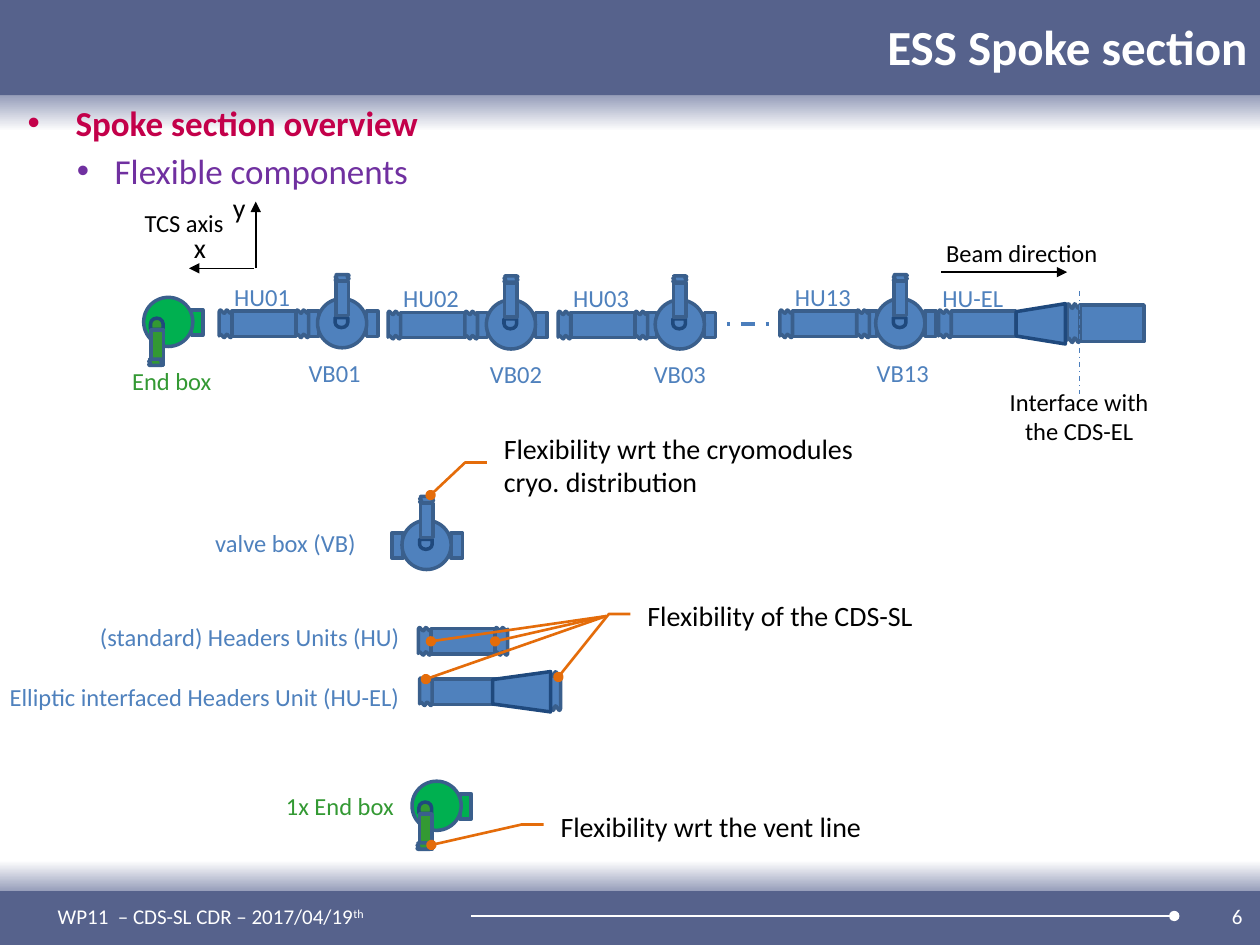
import pptx
import pptx.util
import pptx.dml.color
import pptx.enum.dml
import pptx.enum.shapes
import pptx.enum.text
import pptx.oxml.ns
import lxml.etree

Inches = pptx.util.Inches
Pt = pptx.util.Pt
SHAPE = pptx.enum.shapes.MSO_SHAPE
ALIGN = pptx.enum.text.PP_ALIGN
ANCHOR = pptx.enum.text.MSO_ANCHOR
FIT = pptx.enum.text.MSO_AUTO_SIZE
DASH_DOT = pptx.enum.dml.MSO_LINE.DASH_DOT

COLORS = {
    "bar": "56628C", "fade": "989FBB", "white": "FFFFFF", "black": "000000",
    "heading": "C3004A", "subheading": "7030A0", "pipe": "4F81BD", "edge": "3A5F8C",
    "deep": "1F497D", "axis": "4B7EBC", "box": "00B050", "vent": "339933", "note": "E46C0A",
}

BARS = [(0, 0.76), (7.07, 0.43)]
FADES = [(0.76, 0.28, "fade", "white"), (6.83, 0.24, "white", "fade")]

BULLETS = [
    ("Spoke section overview", "heading", True, 0.38, -0.38, 0),
    ("Flexible components", "subheading", False, 0.69, -0.3, 3),
]

VALVE_BOX = [
    (SHAPE.RECTANGLE, -0.08, 0.1, 0.09, 0.2, 0, "pipe", "edge"),
    (SHAPE.RECTANGLE, 0.39, 0.1, 0.09, 0.2, 0, "pipe", "edge"),
    (SHAPE.OVAL, 0, 0, 0.39, 0.39, 0, "pipe", "edge"),
    (SHAPE.FLOWCHART_DELAY, 0.15, 0.14, 0.08, 0.1, 90, "pipe", "deep"),
    (SHAPE.RECTANGLE, 0.06, -0.05, 0.27, 0.1, 90, "pipe", "edge"),
    (SHAPE.DOUBLE_WAVE, 0.17, -0.22, 0.05, 0.11, 90, "pipe", "edge"),
]
END_BOX = [
    (SHAPE.RECTANGLE, 0.38, 0.1, 0.09, 0.2, 0, "box", "edge"),
    (SHAPE.OVAL, 0, 0, 0.39, 0.39, 0, "box", "edge"),
    (SHAPE.FLOWCHART_DELAY, 0.06, 0.16, 0.09, 0.1, 270, "vent", "deep"),
    (SHAPE.RECTANGLE, -0.03, 0.35, 0.28, 0.1, 270, "vent", "edge"),
    (SHAPE.DOUBLE_WAVE, 0.07, 0.46, 0.05, 0.11, 90, "vent", "edge"),
]
PIPE = [
    (SHAPE.RECTANGLE, 0.1, 0, 0.51, 0.2, 0, "pipe", "edge"),
    (SHAPE.DOUBLE_WAVE, 0, -0.01, 0.1, 0.22, 0, "pipe", "edge"),
]
HEADER_UNIT = PIPE + [(SHAPE.DOUBLE_WAVE, 0.61, -0.01, 0.1, 0.22, 0, "pipe", "edge")]
OUTLET = [(SHAPE.RECTANGLE, 1.12, -0.05, 0.51, 0.29, 0, "pipe", "edge")]

CELLS = [
    ("HU01", 1.74, "VB01", 2.52, 2.35, 2.47),
    ("HU02", 3.08, "VB02", 3.86, 3.79, 2.48),
    ("HU03", 4.43, "VB03", 5.2, 5.09, 2.48),
    ("HU13", 6.19, "VB13", 6.95, 6.86, 2.47),
]
ROW_LABELS = [
    ("End box", 0.95, 2.86, 0.84, 14, "vent"),
    ("Beam direction", 7.41, 1.84, 1.42, 14, "black"),
    ("x", 1.44, 1.78, 0.3, 16, "black"),
    ("y", 1.75, 1.46, 0.3, 16, "black"),
    ("HU-EL", 7.38, 2.2, 0.69, 14, "pipe"),
    ("TCS axis", 1.05, 1.6, 0.83, 14, "black"),
]
ARROWS = [(7.47, 2.16, 8.47, 2.16), (2.02, 2.13, 1.5, 2.13), (2.03, 2.13, 2.03, 1.6)]

CALLOUTS = [
    ("Flexibility wrt the cryomodules cryo. distribution", 3.9, 3.37, 0.64, 0.874, -0.146),
    ("Flexibility of the CDS-SL", 5.04, 4.7, 0.37, 1.82, -0.184),
    ("Flexibility wrt the vent line", 4.35, 6.37, 0.37, 0.909, -0.28),
]
FLEX_ORIGIN = (4.81, 4.89)
FLEX_POINTS = [(3.93, 5.09), (3.38, 5.39), (3.42, 5.09)]


def rgb(name):
    return pptx.dml.color.RGBColor.from_string(COLORS[name])


def apply(target, values):
    for key, value in values.items():
        setattr(target, key, value)


def write(paragraph, text, size, color, bold=False):
    run = paragraph.add_run()
    run.text = text
    apply(run.font, {"name": "Calibri", "size": Pt(size), "bold": bold})
    run.font.color.rgb = rgb(color)
    return run


def outline(shape, color, width):
    shape.line.color.rgb = rgb(color)
    shape.line.width = Pt(width)


def end_mark(shape, kind):
    tail = lxml.etree.SubElement(shape.line._get_or_add_ln(), pptx.oxml.ns.qn("a:tailEnd"))
    tail.set("type", kind)


def preset(shapes, kind, left, top, width, height):
    shape = shapes.add_shape(kind, Inches(left), Inches(top), Inches(width), Inches(height))
    shape.shadow.inherit = False
    return shape


def line(shapes, points, color, width, mark=None, dash=None):
    connector = shapes.add_connector(
        pptx.enum.shapes.MSO_CONNECTOR.STRAIGHT, *[Inches(value) for value in points])
    outline(connector, color, width)
    if dash:
        connector.line.dash_style = dash
    if mark:
        end_mark(connector, mark)
    lxml.etree.SubElement(connector._element.spPr, pptx.oxml.ns.qn("a:effectLst"))


def label(shapes, text, left, top, width, height, size, color, align=ALIGN.LEFT, gap=0, **frame):
    box = shapes.add_textbox(Inches(left), Inches(top), Inches(width), Inches(height))
    apply(box.text_frame, {"word_wrap": False, "auto_size": FIT.SHAPE_TO_FIT_TEXT, **frame})
    for index, content in enumerate(text.split("\n")):
        paragraph = box.text_frame.add_paragraph() if index else box.text_frame.paragraphs[0]
        paragraph.alignment = align
        if index:
            paragraph.space_before = Pt(gap)
        write(paragraph, content, size, color)
    return box


def assemble(shapes, parts, left, top):
    for kind, dx, dy, width, height, turn, fill, edge in parts:
        part = preset(shapes, kind, left + dx, top + dy, width, height)
        part.rotation = turn
        part.fill.solid()
        part.fill.fore_color.rgb = rgb(fill)
        outline(part, edge, 2)
        if kind == SHAPE.TRAPEZOID:
            part.adjustments[0] = 0.197


def elliptic_unit(cone):
    return PIPE + [
        (SHAPE.DOUBLE_WAVE, 1.02, -0.06, 0.1, 0.31, 0, "pipe", "edge"),
        (SHAPE.TRAPEZOID, 0.65, 0.1 - cone / 2, 0.32, cone, 270, "pipe", "deep"),
    ]


def draw_frame(slide):
    shapes = slide.shapes
    for top, height in BARS:
        bar = preset(shapes, SHAPE.RECTANGLE, 0, top, 10, height)
        bar.fill.solid()
        bar.fill.fore_color.rgb = rgb("bar")
        bar.line.fill.background()
    for top, height, start, end in FADES:
        band = preset(shapes, SHAPE.RECTANGLE, 0, top, 10, height)
        band.fill.gradient()
        band.fill.gradient_angle = 270
        for stop, color in zip(band.fill.gradient_stops, (start, end)):
            stop.color.rgb = rgb(color)
        band.line.fill.background()
    line(shapes, (3.74, 7.27, 9.32, 7.27), "white", 1.5, "oval")
    footer = {"word_wrap": True, "auto_size": FIT.NONE, "vertical_anchor": ANCHOR.MIDDLE}
    event = label(shapes, "WP11  – CDS-SL CDR – 2017/04/19", 0.36, 7.07, 3.53, 0.4, 12, "white", **footer)
    ordinal = write(event.text_frame.paragraphs[0], "th", 12, "white")
    ordinal._r.get_or_add_rPr().set("baseline", "30000")
    label(shapes, "6", 7.63, 7.07, 2.33, 0.4, 12, "white", ALIGN.RIGHT, **footer)

    title = shapes.title
    shapes._spTree.append(title._element)
    apply(title, {"left": Inches(1.06), "top": Inches(-0.03), "width": Inches(8.94), "height": Inches(0.79)})
    apply(title.text_frame, {"vertical_anchor": ANCHOR.MIDDLE, "word_wrap": True, "auto_size": FIT.NONE})
    title.text_frame.paragraphs[0].alignment = ALIGN.RIGHT
    write(title.text_frame.paragraphs[0], "ESS Spoke section", 28, "white", True)

    outline_box = shapes.add_textbox(Inches(0.2), Inches(0.76), Inches(9.8), Inches(6.32))
    frame = outline_box.text_frame
    apply(frame, {"word_wrap": True, "margin_left": Inches(0.02), "margin_top": Inches(0.05),
                  "margin_right": Inches(0.02), "margin_bottom": Inches(0.02)})
    for index, (text, color, bold, indent, hanging, gap) in enumerate(BULLETS):
        paragraph = frame.add_paragraph() if index else frame.paragraphs[0]
        paragraph.level = index
        if gap:
            paragraph.space_before = Pt(gap)
        properties = paragraph._p.get_or_add_pPr()
        properties.set("marL", str(Inches(indent)))
        properties.set("indent", str(Inches(hanging)))
        lxml.etree.SubElement(properties, pptx.oxml.ns.qn("a:buFont")).set("typeface", "Arial")
        lxml.etree.SubElement(properties, pptx.oxml.ns.qn("a:buChar")).set("char", "•")
        write(paragraph, text, 20, color, bold)


def draw_legend(slide):
    valve = slide.shapes.add_group_shape().shapes
    label(valve, "valve box (VB)", 1.61, 4.14, 1.33, 0.34, 14, "pipe")
    assemble(valve, VALVE_BOX, 3.19, 4.13)
    headers = slide.shapes.add_group_shape().shapes
    assemble(headers, elliptic_unit(0.46), 3.33, 5.39)
    assemble(headers, HEADER_UNIT, 3.32, 4.99)
    label(headers, "(standard) Headers Units (HU)\nElliptic interfaced Headers Unit (HU-EL)",
          -0.06, 4.89, 3.33, 0.81, 14, "pipe", ALIGN.RIGHT, 17)
    end = slide.shapes.add_group_shape().shapes
    label(end, "1x End box", 2.17, 6.23, 1.11, 0.34, 14, "vent")
    assemble(end, END_BOX, 3.27, 6.2)

    for text, left, top, height, tip_y, tip_x in CALLOUTS:
        callout = preset(slide.shapes, SHAPE.LINE_CALLOUT_2_NO_BORDER, left, top, 3.31, height)
        callout.fill.background()
        outline(callout, "note", 1.5)
        end_mark(callout, "oval")
        for index, value in enumerate((0.47, -0.011, 0.47, -0.063, tip_y, tip_x)):
            callout.adjustments[index] = value
        apply(callout.text_frame, {"word_wrap": True, "vertical_anchor": ANCHOR.MIDDLE})
        callout.text_frame.paragraphs[0].alignment = ALIGN.LEFT
        write(callout.text_frame.paragraphs[0], text, 16, "black")
    for point in FLEX_POINTS:
        line(slide.shapes, FLEX_ORIGIN + point, "note", 1.5, "oval")


def draw_row(slide):
    row = slide.shapes.add_group_shape().shapes
    line(row, (4.65, 2.57, 6.31, 2.57), "axis", 2, dash=DASH_DOT)
    for unit, unit_left, valve, valve_left, valve_label, top in CELLS:
        assemble(row, VALVE_BOX, valve_left, top - 0.1)
        assemble(row, HEADER_UNIT, unit_left, top)
        label(row, unit, unit_left + 0.02, top - 0.28, 0.65, 0.34, 14, "pipe")
        label(row, valve, valve_label, top + 0.32, 0.62, 0.34, 14, "pipe")
    assemble(row, OUTLET + elliptic_unit(0.39), 7.45, 2.47)
    assemble(row, END_BOX, 1.14, 2.36)
    label(row, "Interface with the CDS-EL", 7.9, 3.02, 1.33, 0.57, 14, "black", ALIGN.CENTER, word_wrap=True)
    line(row, (8.57, 2.31, 8.57, 3.13), "axis", 0.75, dash=DASH_DOT)
    for arrow in ARROWS:
        line(row, arrow, "black", 1, "triangle")
    for text, left, top, width, size, color in ROW_LABELS:
        label(row, text, left, top, width, 0.34, size, color)


def main():
    deck = pptx.Presentation()
    apply(deck, {"slide_width": Inches(10), "slide_height": Inches(7.5)})
    slide = deck.slides.add_slide(deck.slide_layouts[5])
    draw_frame(slide)
    draw_legend(slide)
    draw_row(slide)
    deck.save("out.pptx")


if __name__ == "__main__":
    main()
